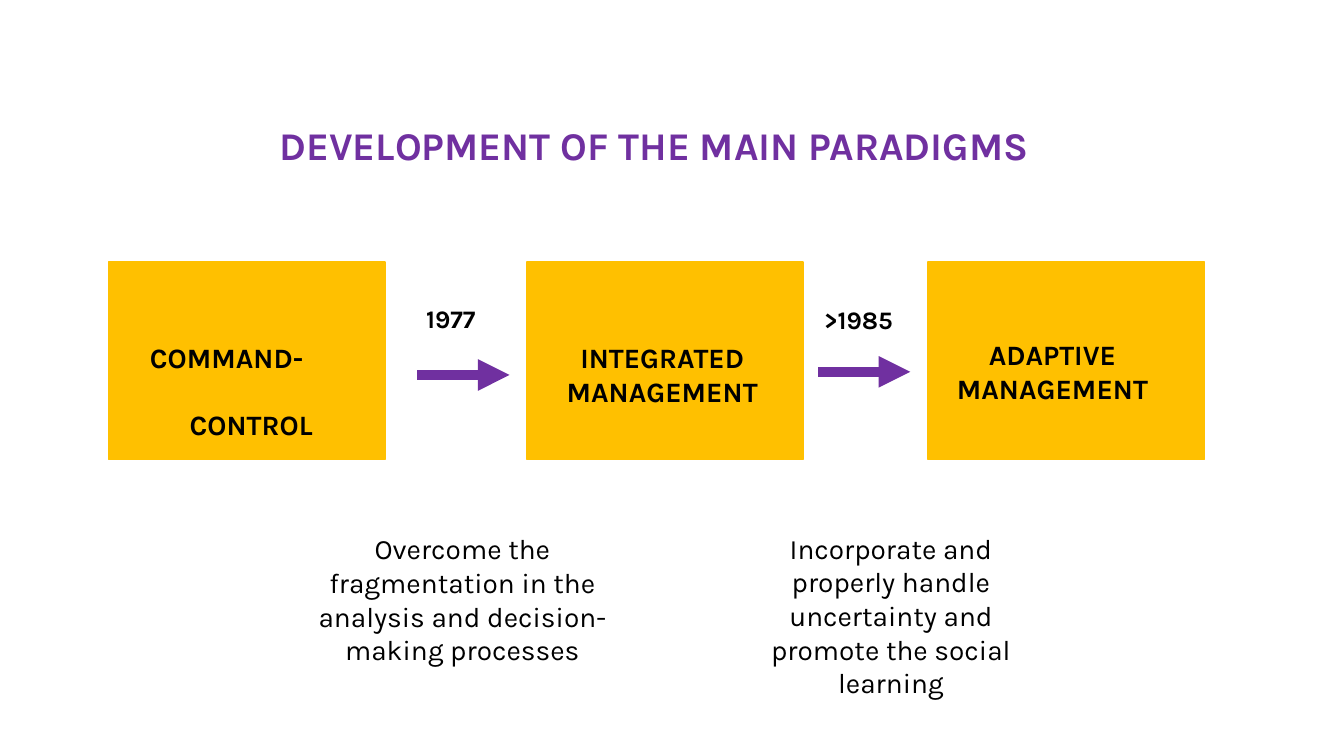
"""Builds a slide showing how the main management paradigms developed."""
import dataclasses

import lxml.etree
import pptx
import pptx.dml.color
import pptx.enum.shapes
import pptx.enum.text
import pptx.oxml.ns
import pptx.util

Cm = pptx.util.Cm
Pt = pptx.util.Pt
Align = pptx.enum.text.PP_ALIGN
RGB = pptx.dml.color.RGBColor


@dataclasses.dataclass(frozen=True)
class Theme:
    font: str = "Karla"
    accent: RGB = RGB(0x70, 0x30, 0xA0)
    panel: RGB = RGB(0xFF, 0xC0, 0x00)
    ink: RGB = RGB(0, 0, 0)
    title: Pt = Pt(28)
    body: Pt = Pt(20)
    year: Pt = Pt(18)
    arrow: Pt = Pt(7.5)


class SlideBuilder:
    def __init__(self, slide, theme):
        self.slide = slide
        self.theme = theme

    def style(self, paragraph, size, color, bold, align):
        paragraph.alignment = align
        for run in paragraph.runs:
            run.font.name = self.theme.font
            run.font.size = size
            run.font.bold = bold
            run.font.color.rgb = color

    def title(self, text, left, top, width, height):
        heading = self.slide.shapes.title
        heading.left, heading.top = Cm(left), Cm(top)
        heading.width, heading.height = Cm(width), Cm(height)
        frame = heading.text_frame
        frame.text = text
        frame.auto_size = pptx.enum.text.MSO_AUTO_SIZE.NONE
        frame.vertical_anchor = pptx.enum.text.MSO_ANCHOR.TOP
        self.style(frame.paragraphs[0], self.theme.title, self.theme.accent, True, Align.CENTER)

    def panel(self, left, top, width, height):
        panel = self.slide.shapes.add_shape(
            pptx.enum.shapes.MSO_SHAPE.RECTANGLE, Cm(left), Cm(top), Cm(width), Cm(height))
        panel.shadow.inherit = False
        panel.fill.solid()
        panel.fill.fore_color.rgb = self.theme.panel
        panel.line.color.rgb = self.theme.panel
        panel.line.width = Pt(1)

    def text(self, text, left, top, width, height, size=None, bold=False,
             aligns=(Align.CENTER,), wrap=True, gap=0):
        frame = self.slide.shapes.add_textbox(
            Cm(left), Cm(top), Cm(width), Cm(height)).text_frame
        frame.text = text
        frame.word_wrap = wrap
        frame.auto_size = pptx.enum.text.MSO_AUTO_SIZE.SHAPE_TO_FIT_TEXT
        for paragraph, align in zip(frame.paragraphs, aligns):
            self.style(paragraph, size or self.theme.body, self.theme.ink, bold, align)
        for paragraph in frame.paragraphs[1:]:
            paragraph.space_before = Pt(gap)

    def arrow(self, left, y, length):
        arrow = self.slide.shapes.add_connector(
            pptx.enum.shapes.MSO_CONNECTOR.STRAIGHT, Cm(left), Cm(y), Cm(left + length), Cm(y))
        arrow.line.color.rgb = self.theme.accent
        arrow.line.width = self.theme.arrow
        qn = pptx.oxml.ns.qn
        properties = arrow.element.spPr
        lxml.etree.SubElement(properties.find(qn("a:ln")), qn("a:tailEnd"), type="triangle")
        lxml.etree.SubElement(properties, qn("a:effectLst"))


def main():
    deck = pptx.Presentation()
    deck.slide_width, deck.slide_height = Cm(33.87), Cm(19.05)
    theme = Theme()
    builder = SlideBuilder(deck.slides.add_slide(deck.slide_layouts[5]), theme)

    builder.title("DEVELOPMENT OF THE MAIN PARADIGMS", 4.98, 2.92, 23, 2.49)
    for left in (2.74, 13.28, 23.39):
        builder.panel(left, 6.6, 6.96, 4.98)

    builder.text("COMMAND-\nCONTROL", 3.53, 8.46, 4.6, 2.8, bold=True,
                 aligns=(Align.LEFT, Align.RIGHT), gap=24)
    for paradigm, left, top, width in (
            ("INTEGRATED MANAGEMENT", 13.11, 8.46, 7.16),
            ("ADAPTIVE MANAGEMENT", 23.44, 8.38, 6.17)):
        builder.text(paradigm, left, top, width, 1.96, bold=True)

    for left, y in ((10.52, 9.45), (20.62, 9.37)):
        builder.arrow(left, y, 2.32)
    for year, left, top, width in (("1977", 10.49, 7.52, 2), (">1985", 20.52, 7.54, 2.39)):
        builder.text(year, left, top, width, 1.02, theme.year, True, (Align.LEFT,), wrap=False)

    for reason, left, top, height in (
            ("Overcome the fragmentation in the analysis and decision-making processes",
             7.59, 13.28, 3.68),
            ("Incorporate and properly handle uncertainty and promote the social learning",
             18.39, 13.26, 4.52)):
        builder.text(reason, left, top, 8.13, height)

    deck.save("out.pptx")


if __name__ == "__main__":
    main()
